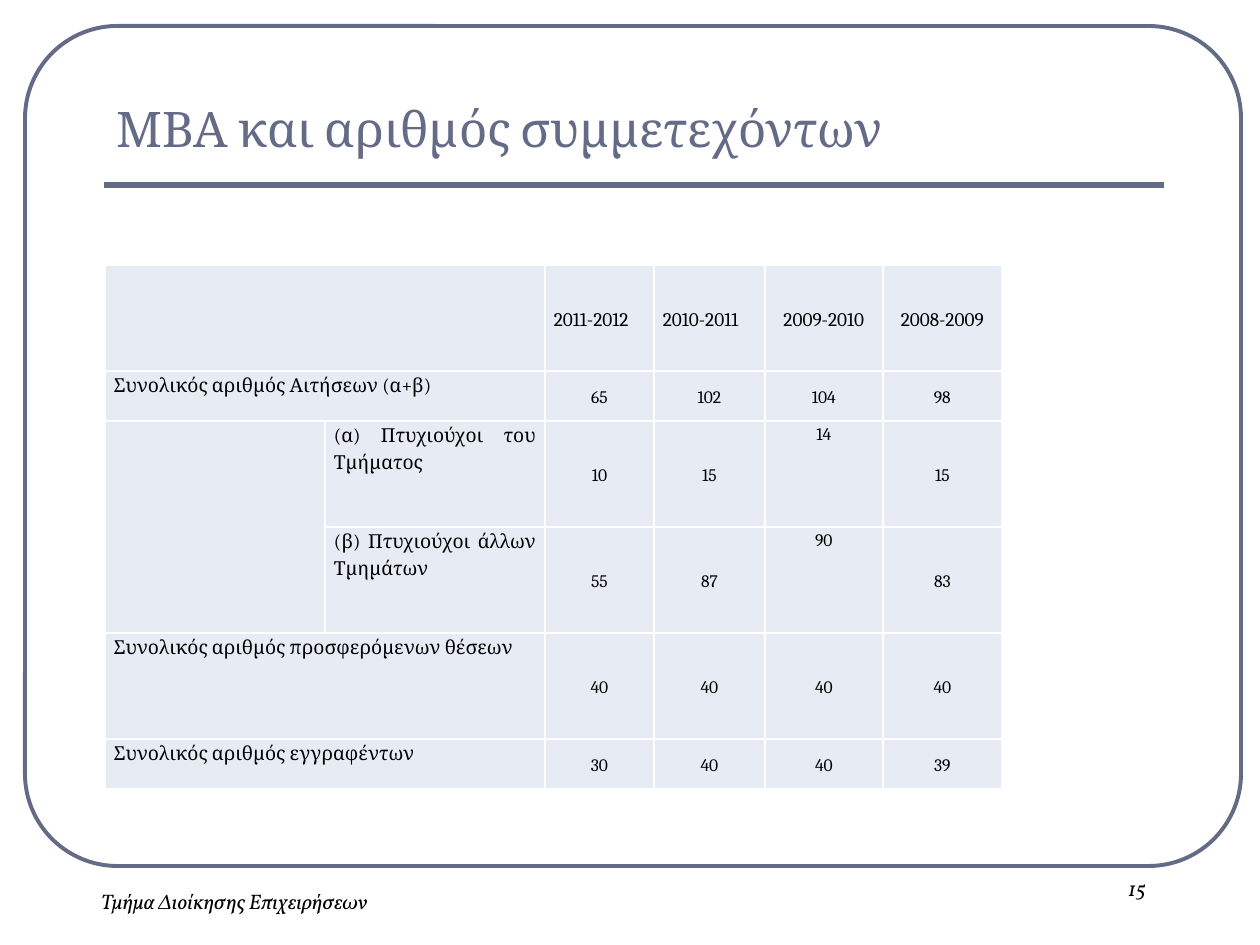
from lxml.etree import SubElement
from pptx import Presentation
from pptx.dml.color import RGBColor
from pptx.enum.shapes import MSO_CONNECTOR, MSO_SHAPE
from pptx.enum.text import MSO_ANCHOR as Anchor, PP_ALIGN as Align
from pptx.oxml import parse_xml
from pptx.oxml.ns import nsdecls, qn
from pptx.util import Pt

# Content
TITLE = "ΜΒΑ και αριθμός συμμετεχόντων"
FOOTER = "Τμήμα Διοίκησης Επιχειρήσεων"
PAGE = "15"
YEARS = ["2011-2012", "2010-2011", "2009-2010", "2008-2009"]
# (label, label column, values, row height)
ROWS = [
    ("", 0, YEARS, 106),
    ("Συνολικός αριθμός Αιτήσεων (α+β)", 0, ["65", "102", "104", "98"], 50),
    ("(α) Πτυχιούχοι του Τμήματος", 1, ["10", "15", "14", "15"], 106),
    ("(β) Πτυχιούχοι άλλων Τμημάτων", 1, ["55", "87", "90", "83"], 106),
    ("Συνολικός αριθμός προσφερόμενων θέσεων", 0, ["40"] * 4, 106),
    ("Συνολικός αριθμός εγγραφέντων", 0, ["30", "40", "40", "39"], 50),
]
COLUMNS = [220, 220, 109, 111, 118, 119]
FIRST_VALUE = 2
JUSTIFIED_YEARS = YEARS[:2]
TOP_COLUMN = 4  # its values in the sub-rows sit at the top

SLATE = RGBColor(0x64, 0x6B, 0x86)
PALE = RGBColor(0xE7, 0xEB, 0xF4)
WHITE = RGBColor(0xFF, 0xFF, 0xFF)
BLACK = RGBColor(0, 0, 0)
BODY_FONT, FOOTER_FONT = "Cambria", "Vollkorn"


def px(n):
    return n * 914400 // 126


prs = Presentation()
prs.slide_width, prs.slide_height = px(1260), px(945)
slide = prs.slides.add_slide(prs.slide_layouts[6])


def style(para, text, size, font, color, align, italic=None):
    para.text = text
    para.alignment = align
    para.font.size = Pt(size)
    para.font.name = font
    para.font.color.rgb = color
    para.font.italic = italic


def add_text(box, *look, anchor=Anchor.TOP):
    frame = slide.shapes.add_textbox(*map(px, box)).text_frame
    frame.word_wrap = True
    frame.vertical_anchor = anchor
    style(frame.paragraphs[0], *look)


def add_borders(cell):
    props = cell._tc.get_or_add_tcPr()
    for i, side in enumerate(("lnL", "lnR", "lnT", "lnB")):
        props.insert(i, parse_xml(
            f'<a:{side} {nsdecls("a")} w="12700"><a:solidFill>'
            f'<a:srgbClr val="{WHITE}"/></a:solidFill></a:{side}>'))


def fill_cell(cell, text, size, align, anchor):
    para = cell.text_frame.paragraphs[0]
    style(para, text, size, BODY_FONT, BLACK, align)
    para.line_spacing = 1.2
    para.space_before = para.space_after = Pt(2)
    cell.vertical_anchor = anchor


# Frame and title rule
frame = slide.shapes.add_shape(MSO_SHAPE.ROUNDED_RECTANGLE, *map(px, (25, 26, 1216, 840)))
frame.adjustments[0] = 0.11
frame.shadow.inherit = False
frame.fill.background()
frame.line.color.rgb = SLATE
frame.line.width = Pt(2.25)

rule = slide.shapes.add_connector(MSO_CONNECTOR.STRAIGHT, *map(px, (104, 185, 1164, 185)))
rule.line.color.rgb = SLATE
rule.line.width = Pt(3)
SubElement(rule._element.spPr, qn("a:effectLst"))

# Title, footer and page number
add_text((104, 45, 1061, 119), TITLE, 28, BODY_FONT, SLATE, Align.LEFT, anchor=Anchor.BOTTOM)
add_text((35, 882, 399, 63), FOOTER, 12, FOOTER_FONT, BLACK, Align.CENTER, True)
add_text((1027, 869, 220, 63), PAGE, 12, FOOTER_FONT, BLACK, Align.CENTER, True)

# Table
heights = [row[-1] for row in ROWS]
table = slide.shapes.add_table(
    len(ROWS), len(COLUMNS), *map(px, (105, 265, sum(COLUMNS), sum(heights)))).table
table.first_row = table.horz_banding = False
for column, width in zip(table.columns, COLUMNS):
    column.width = px(width)
for row, height in zip(table.rows, heights):
    row.height = px(height)
for cell in table.iter_cells():
    cell.fill.solid()
    cell.fill.fore_color.rgb = PALE
    cell.margin_left = cell.margin_right = px(9)
    cell.margin_top = cell.margin_bottom = 0
    add_borders(cell)

for r, (label, label_column, values, _) in enumerate(ROWS):
    if label_column == 0:
        table.cell(r, 0).merge(table.cell(r, 1))
    if label:
        fill_cell(table.cell(r, label_column), label, 11, Align.JUSTIFY, Anchor.TOP)
    for c, value in enumerate(values, FIRST_VALUE):
        at_top = label_column == 1 and c == TOP_COLUMN
        fill_cell(table.cell(r, c), value, 11 if values is YEARS else 10,
                  Align.JUSTIFY if value in JUSTIFIED_YEARS else Align.CENTER,
                  Anchor.TOP if at_top else Anchor.MIDDLE)
table.cell(2, 0).merge(table.cell(3, 0))

prs.save("out.pptx")
